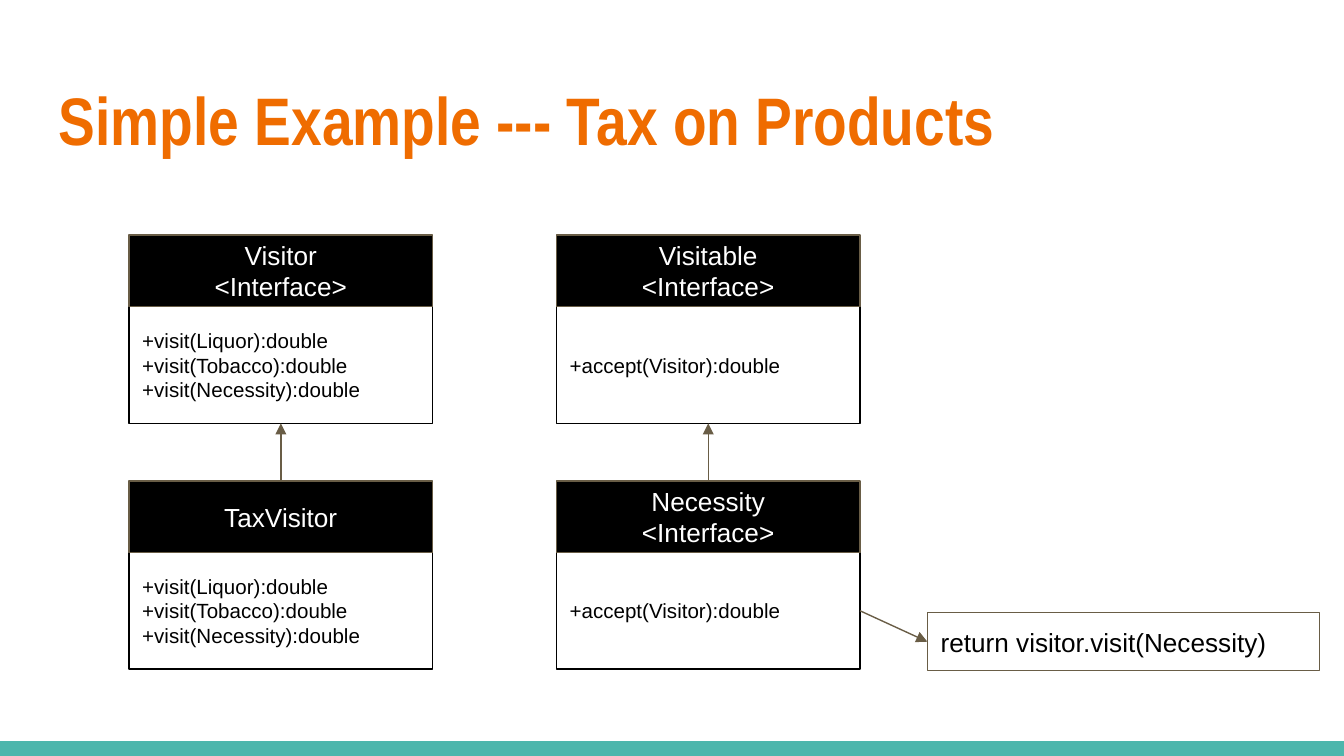
from dataclasses import dataclass

from lxml import etree
from pptx import Presentation
from pptx.dml.color import RGBColor
from pptx.enum import shapes, text
from pptx.oxml.ns import qn
from pptx.util import Inches, Pt


@dataclass(frozen=True)
class Theme:
    """Colours, fonts and type sizes of the slide."""
    accent: str = "EF6C00"
    band: str = "4DB6AC"
    dark: str = "000000"
    light: str = "FFFFFF"
    rule: str = "695D46"
    heading_font: str = "Arial Narrow"
    body_font: str = "Arial"
    heading_size: int = 36
    name_size: int = 14
    method_size: int = 11
    line_width: float = 0.75


THEME = Theme()
WIDTH = 10
HEIGHT = WIDTH * 9 / 16
LEFT, TOP = 0.96, 1.75
COLUMN_STEP, ROW_STEP = 3.18, 1.83
CLASS_WIDTH, NAME_HEIGHT, METHODS_HEIGHT = 2.26, 0.53, 0.87

VISITS = ["+visit(Liquor):double", "+visit(Tobacco):double", "+visit(Necessity):double"]
ACCEPTS = ["+accept(Visitor):double"]
CLASSES = {
    (0, 0): (["Visitor", "<Interface>"], VISITS),
    (0, 1): (["TaxVisitor"], VISITS),
    (1, 0): (["Visitable", "<Interface>"], ACCEPTS),
    (1, 1): (["Necessity", "<Interface>"], ACCEPTS),
}


def write(shape, lines, size, color, font=THEME.body_font, bold=False, align=text.PP_ALIGN.LEFT):
    """Fill a shape with one paragraph per line."""
    frame = shape.text_frame
    margins = {f"margin_{side}": Inches(0.1) for side in ("left", "top", "right", "bottom")}
    layout = {"word_wrap": True, "vertical_anchor": text.MSO_ANCHOR.MIDDLE, **margins}
    for key, value in layout.items():
        setattr(frame, key, value)
    frame.text = "\n".join(lines)
    for paragraph in frame.paragraphs:
        paragraph.alignment = align
        for key, value in {"name": font, "size": Pt(size), "bold": bold}.items():
            setattr(paragraph.runs[0].font, key, value)
        paragraph.runs[0].font.color.rgb = RGBColor.from_string(color)


def add_box(parent, box, fill, line=None):
    """Add a flat rectangle with an optional outline."""
    rectangle = parent.add_shape(shapes.MSO_SHAPE.RECTANGLE, *map(Inches, box))
    rectangle.shadow.inherit = False
    rectangle.fill.solid()
    rectangle.fill.fore_color.rgb = RGBColor.from_string(fill)
    if line:
        rectangle.line.color.rgb = RGBColor.from_string(line)
        rectangle.line.width = Pt(THEME.line_width)
    else:
        rectangle.line.fill.background()
    return rectangle


def add_title(slide, box, title):
    """Add the slide heading."""
    heading = slide.shapes.add_textbox(*map(Inches, box))
    write(heading, [title], THEME.heading_size, THEME.accent, THEME.heading_font, bold=True)


def add_class(slide, box, names, methods):
    """Add a class as a grouped name bar and method list."""
    left, top, width, height = box
    parts = slide.shapes.add_group_shape().shapes
    method_list = add_box(parts, (left, top + NAME_HEIGHT, width, height - NAME_HEIGHT),
                          THEME.light, THEME.dark)
    write(method_list, methods, THEME.method_size, THEME.dark)
    name_bar = add_box(parts, (left, top, width, NAME_HEIGHT), THEME.dark, THEME.rule)
    write(name_bar, names, THEME.name_size, THEME.light, align=text.PP_ALIGN.CENTER)
    return name_bar, method_list


def add_note(slide, box, code):
    """Add an outlined box with a line of code."""
    note = add_box(slide.shapes, box, THEME.light, THEME.rule)
    write(note, [code], THEME.name_size, THEME.dark)
    return note


def add_arrow(slide, source, source_side, target, target_side):
    """Join two rectangles with an arrow that points at the target."""
    arrow = slide.shapes.add_connector(shapes.MSO_CONNECTOR.STRAIGHT, 0, 0, 0, 0)
    arrow.begin_connect(source, source_side)
    arrow.end_connect(target, target_side)
    arrow.line.color.rgb = RGBColor.from_string(THEME.rule)
    arrow.line.width = Pt(THEME.line_width)
    etree.SubElement(arrow.line._get_or_add_ln(), qn("a:tailEnd"), type="triangle")
    etree.SubElement(arrow._element.spPr, qn("a:effectLst"))


def add_diagram(slide, left, top):
    """Lay the classes on a grid and link each to its interface."""
    placed = {}
    for (column, row), (names, methods) in CLASSES.items():
        box = (left + column * COLUMN_STEP, top + row * ROW_STEP,
               CLASS_WIDTH, NAME_HEIGHT + METHODS_HEIGHT)
        placed[column, row] = add_class(slide, box, names, methods)
    for column in (0, 1):
        add_arrow(slide, placed[column, 1][0], 0, placed[column, 0][1], 2)
    note = add_note(slide, (left + 5.94, top + 2.81, 2.92, 0.43), "return visitor.visit(Necessity)")
    add_arrow(slide, placed[1, 1][1], 3, note, 1)


def main():
    """Build and save the slide."""
    deck = Presentation()
    deck.slide_width, deck.slide_height = Inches(WIDTH), Inches(HEIGHT)
    slide = deck.slides.add_slide(deck.slide_layouts[6])
    add_box(slide.shapes, (0, HEIGHT - 0.11, WIDTH, 0.11), THEME.band)
    add_title(slide, (0.34, 0.5, 9.32, 0.77), "Simple Example --- Tax on Products")
    add_diagram(slide, LEFT, TOP)
    deck.save("out.pptx")


if __name__ == "__main__":
    main()
